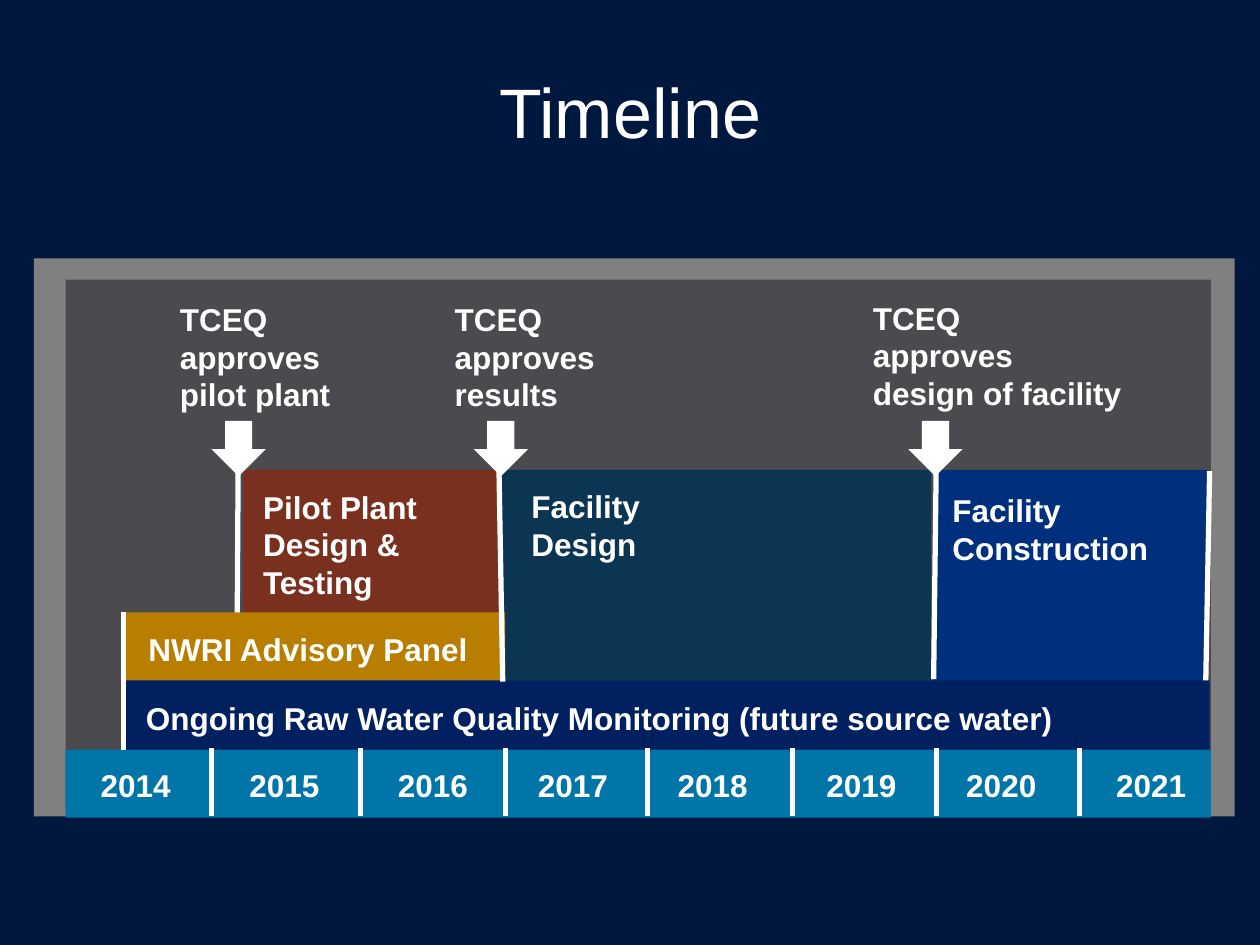
from dataclasses import dataclass
from typing import NamedTuple

from lxml import etree
from pptx import Presentation
from pptx.dml.color import RGBColor
from pptx.enum import shapes, text
from pptx.oxml import ns
from pptx.util import Inches, Pt


@dataclass(frozen=True)
class Theme:
    back: str = "00173E"
    frame: str = "808080"
    panel: str = "4B4B4F"
    white: str = "FFFFFF"
    years: str = "0075A8"
    pilot: str = "7A301F"
    design: str = "0C3453"
    build: str = "002F7D"
    advice: str = "B97D00"
    water: str = "002060"
    font: str = "Arial"
    title: int = 40
    body: int = 18
    rule: int = 3


class Box(NamedTuple):
    left: float
    top: float
    width: float
    height: float


class Block(NamedTuple):
    box: Box
    fill: str


class Label(NamedTuple):
    box: Box
    lines: tuple[str, ...]


class Rule(NamedTuple):
    x1: float
    y1: float
    x2: float
    y2: float


class Event(NamedTuple):
    label: Label
    arrow: float


T = Theme()
RECT = shapes.MSO_SHAPE.RECTANGLE
ARROW = shapes.MSO_SHAPE.DOWN_ARROW

BACK = (
    Block(Box(0.27, 2.05, 9.53, 4.43), T.frame),
    Block(Box(0.52, 2.22, 9.09, 4.22), T.panel),
    Block(Box(7.41, 3.73, 2.17, 1.69), T.build),
    Block(Box(0.52, 5.95, 9.09, 0.54), T.years),
    Block(Box(1.93, 3.73, 2.05, 1.16), T.pilot),
)
START = Rule(1.88, 5.36, 1.89, 3.75)
FRONT = (
    Block(Box(3.98, 3.73, 3.41, 1.67), T.design),
    Block(Box(1, 4.86, 3.01, 0.55), T.advice),
    Block(Box(0.97, 5.4, 8.63, 0.55), T.water),
)
LABELS = (
    Label(Box(1.99, 3.82, 3.04, 1.01), ("Pilot Plant", "Design &", "Testing")),
    Label(Box(4.12, 3.82, 1.96, 0.4), ("Facility Design",)),
    Label(Box(7.46, 3.85, 1.92, 0.71), ("Facility", "Construction")),
    Label(Box(1.08, 4.95, 2.91, 0.4), ("NWRI Advisory Panel",)),
    Label(Box(1.06, 5.5, 7.75, 0.4),
          ("Ongoing Raw Water Quality Monitoring (future source water)",)),
)
EVENTS = (
    Event(Label(Box(1.33, 2.33, 1.55, 1.01),
                ("TCEQ", "approves", "pilot plant")), 1.68),
    Event(Label(Box(3.51, 2.33, 2.08, 1.01),
                ("TCEQ", "approves", "results")), 3.76),
    Event(Label(Box(6.83, 2.32, 2.82, 1.01),
                ("TCEQ", "approves", "design of facility")), 7.21),
)
EDGES = (
    Rule(0.98, 5.95, 0.98, 4.86),
    Rule(3.99, 5.41, 3.96, 3.71),
    Rule(7.41, 5.39, 7.43, 3.72),
    Rule(9.57, 5.4, 9.6, 3.74),
)
TICKS = (1.68, 2.86, 4.01, 5.14, 6.29, 7.43, 8.57)
STOPS = (0.62, 1.8, 2.98, 4.09, 5.2, 6.38, 7.49, 8.68)


def tint(hue: str) -> RGBColor:
    return RGBColor.from_string(hue)


def place(box: Box) -> list[int]:
    return [Inches(side) for side in box]


def add_block(parent, block: Block, kind=RECT) -> None:
    shape = parent.add_shape(kind, *place(block.box))
    shape.shadow.inherit = False
    shape.fill.solid()
    shape.fill.fore_color.rgb = tint(block.fill)
    shape.line.fill.background()


def add_label(parent, label: Label, size: int = T.body, bold: bool = True):
    frame = parent.add_textbox(*place(label.box)).text_frame
    frame.word_wrap = True
    frame.text = "\n".join(label.lines)
    for para in frame.paragraphs:
        font = para.font
        font.name, font.size, font.bold = T.font, Pt(size), bold
        font.color.rgb = tint(T.white)
    return frame


def add_rule(parent, rule: Rule) -> None:
    line = parent.add_connector(shapes.MSO_CONNECTOR.STRAIGHT, *place(rule))
    line.line.color.rgb = tint(T.white)
    line.line.width = Pt(T.rule)
    etree.SubElement(line._element.spPr, ns.qn("a:effectLst"))


def add_years(parent) -> None:
    """Set the years on one line, each at its own tab stop."""
    row = "".join(f"\t{2014 + step}" for step in range(len(STOPS)))
    frame = add_label(parent, Label(Box(0.08, 6.03, 10.11, 0.4), (row,)))
    props = frame.paragraphs[0]._p.get_or_add_pPr()
    tabs = etree.Element(ns.qn("a:tabLst"))
    for stop in STOPS:
        etree.SubElement(tabs, ns.qn("a:tab"), pos=str(Inches(stop)), algn="l")
    props.insert(0, tabs)


def add_event(parent, event: Event) -> None:
    group = parent.add_group_shape().shapes
    add_label(group, event.label)
    add_block(group, Block(Box(event.arrow, 3.34, 0.43, 0.44), T.white), ARROW)


def main() -> None:
    deck = Presentation()
    deck.slide_width, deck.slide_height = Inches(10), Inches(7.5)
    slide = deck.slides.add_slide(deck.slide_layouts[6])
    slide.background.fill.solid()
    slide.background.fill.fore_color.rgb = tint(T.back)
    items = slide.shapes

    title = Label(Box(0.75, 0.25, 8.5, 1.25), ("Timeline",))
    frame = add_label(items, title, T.title, False)
    frame.vertical_anchor = text.MSO_ANCHOR.MIDDLE
    frame.paragraphs[0].alignment = text.PP_ALIGN.CENTER

    for block in BACK:
        add_block(items, block)
    add_rule(items, START)
    for block in FRONT:
        add_block(items, block)
    for label in LABELS:
        add_label(items, label)
    add_years(items)
    for event in EVENTS:
        add_event(items, event)
    for rule in EDGES:
        add_rule(items, rule)
    for tick in TICKS:
        add_rule(items, Rule(tick, 6.48, tick, 5.94))
    deck.save("out.pptx")


if __name__ == "__main__":
    main()
